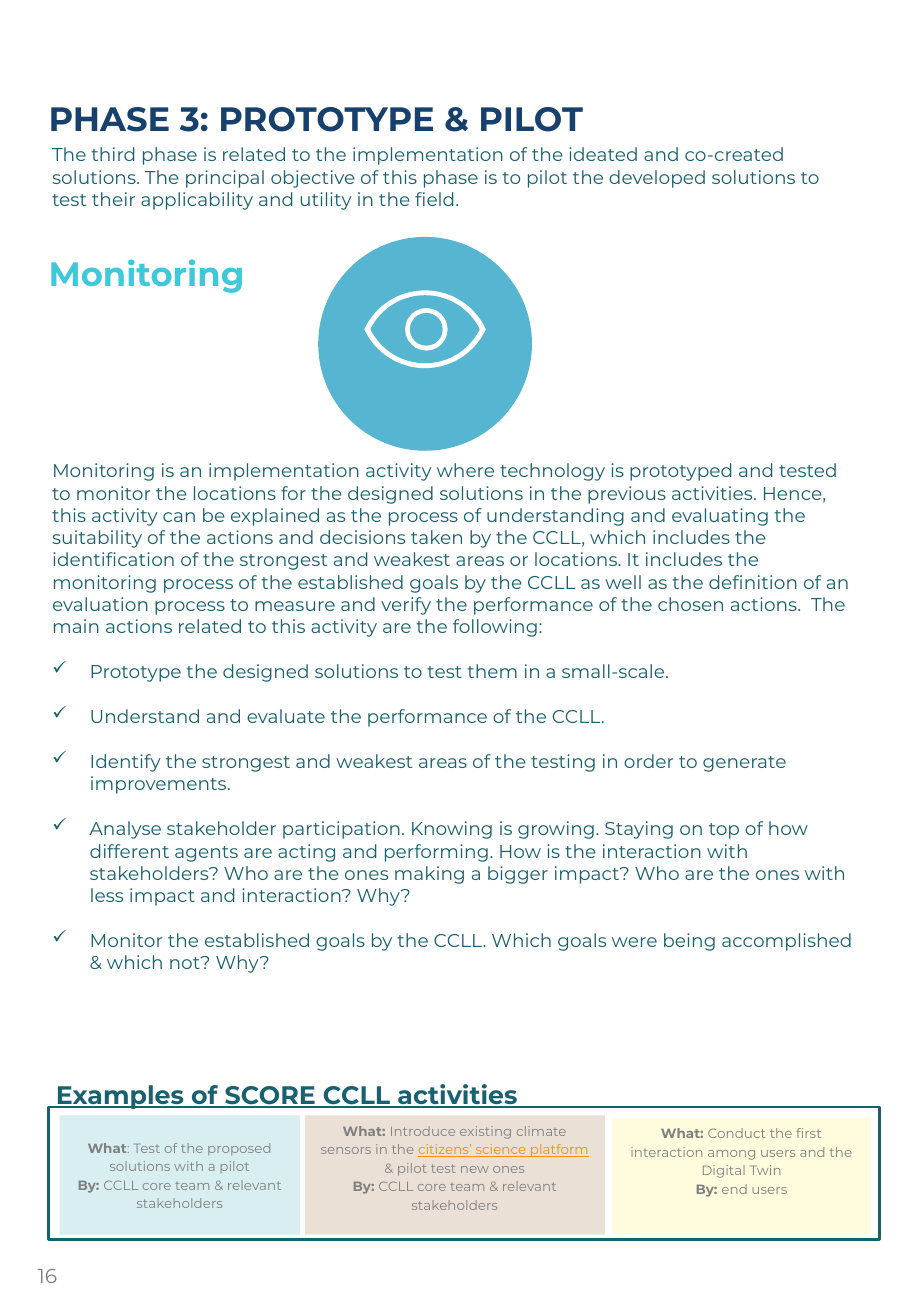
import math
from dataclasses import dataclass

from lxml import etree
from pptx import Presentation
from pptx.dml.color import RGBColor
from pptx.enum import shapes, text
from pptx.oxml.ns import qn
from pptx.util import Inches, Pt


@dataclass(frozen=True)
class Theme:
    font: str = "Montserrat"
    navy: str = "17406D"
    teal: str = "19616F"
    aqua: str = "3EC8D9"
    icon: str = "56B5D1"
    grey: str = "808080"
    orange: str = "F49100"
    white: str = "FFFFFF"
    title: int = 20
    subtitle: int = 15
    number: int = 12
    body: int = 11
    card: int = 8


THEME = Theme()
NO_INSETS = (0, 0, 0, 0)
BODY_INSETS = (0.1, 0.05, 0.1, 0.05)
LABEL_INSETS = (0.06, 0.02, 0.06, 0.03)
CARD_INSETS = (0.1, 0.04, 0.1, 0.05)
BULLET_INDENT = 0.31
BULLET_GAP = 13.4

INTRO = (
    "The third phase is related to the implementation of the ideated and co-created solutions. "
    "The principal objective of this phase is to pilot the developed solutions to test their "
    "applicability and utility in the field."
)
MONITORING = (
    "Monitoring is an implementation activity where technology is prototyped and tested to monitor "
    "the locations for the designed solutions in the previous activities. Hence, this activity can "
    "be explained as the process of understanding and evaluating the suitability of the actions and "
    "decisions taken by the CCLL, which includes the identification of the strongest and weakest "
    "areas or locations. It includes the monitoring process of the established goals by the CCLL as "
    "well as the definition of an evaluation process to measure and verify the performance of the "
    "chosen actions.  The main actions related to this activity are the following:"
)
ACTIONS = [
    "Prototype the designed solutions to test them in a small-scale.",
    "Understand and evaluate the performance of the CCLL.",
    "Identify the strongest and weakest areas of the testing in order to generate improvements.",
    "Analyse stakeholder participation. Knowing is growing. Staying on top of how different agents "
    "are acting and performing. How is the interaction with stakeholders? Who are the ones making a "
    "bigger impact? Who are the ones with less impact and interaction? Why?",
    "Monitor the established goals by the CCLL. Which goals were being accomplished & which not? Why?",
]
# Headings and labels: text, box, size, colour, bold, line spacing, insets
LABELS = [
    ("PHASE 3: PROTOTYPE & PILOT", (0.4, 0.77, 7.1, 0.55),
     THEME.title, THEME.navy, True, 1.1, NO_INSETS),
    ("Monitoring", (0.4, 2.05, 2.1, 0.4), THEME.title, THEME.aqua, True, 1.1, NO_INSETS),
    ("Examples of SCORE CCLL activities", (0.4, 8.82, 5.02, 0.38),
     THEME.subtitle, THEME.teal, True, 1.15, LABEL_INSETS),
    ("16", (0.25, 10.35, 0.6, 0.34), THEME.number, THEME.grey, False, 1.15, LABEL_INSETS),
]
# Example cards: box, fill, opacity in percent, anchor, paragraphs of (text, style) runs
CARDS = [
    ((0.49, 9.18, 1.98, 0.98), "D8EEF0", 100, text.MSO_ANCHOR.MIDDLE, [
        [("What", "bold"), (": Test of the proposed", "")],
        [("solutions with a pilot", "")],
        [("By: ", "bold"), ("CCLL core team & relevant stakeholders", "")],
    ]),
    ((2.51, 9.18, 2.47, 0.98), "996633", 20, text.MSO_ANCHOR.TOP, [
        [("What: ", "bold"), ("Introduce existing climate sensors in the ", ""),
         ("citizens’ science platform ", "link"), ("& pilot test new ones", "")],
        [("By: ", "bold"), ("CCLL core team & relevant stakeholders", "")],
    ]),
    ((5.04, 9.2, 2.13, 0.96), "FFFCDD", 100, text.MSO_ANCHOR.TOP, [
        [("What: ", "bold"),
         ("Conduct the first interaction among users and the Digital Twin", "")],
        [("By: ", "bold"), ("end users", "")],
    ]),
]
FRAME = (0.4, 9.11, 6.84, 1.09)
EYE_CENTER = (3.5, 2.71)


def rgb(value):
    return RGBColor.from_string(value)


def inches(values):
    return [Inches(value) for value in values]


def paint(shape, fill=None, line=None):
    shape.shadow.inherit = False
    if fill:
        shape.fill.solid()
        shape.fill.fore_color.rgb = rgb(fill)
    else:
        shape.fill.background()
    if line:
        shape.line.color.rgb = rgb(line)
        shape.line.width = Pt(1.5)
    else:
        shape.line.fill.background()
    return shape


def add_rectangle(slide, box, fill=None, line=None):
    shape = slide.shapes.add_shape(shapes.MSO_SHAPE.RECTANGLE, *inches(box))
    return paint(shape, fill, line)


def prepare_frame(shape, insets, anchor=text.MSO_ANCHOR.TOP):
    frame = shape.text_frame
    frame.word_wrap = True
    frame.vertical_anchor = anchor
    (frame.margin_left, frame.margin_top,
     frame.margin_right, frame.margin_bottom) = inches(insets)
    return frame


def style(paragraph, size, color, bold=None, spacing=None, align=text.PP_ALIGN.LEFT):
    paragraph.alignment = align
    if spacing:
        paragraph.line_spacing = spacing
    font = paragraph.font
    font.name, font.size, font.bold = THEME.font, Pt(size), bold
    font.color.rgb = rgb(color)


def add_check_bullet(paragraph):
    paragraph.space_before = Pt(BULLET_GAP)
    properties = paragraph._p.get_or_add_pPr()
    properties.set("marL", str(Inches(BULLET_INDENT)))
    properties.set("indent", str(-Inches(BULLET_INDENT)))
    etree.SubElement(properties, qn("a:buChar")).set("char", "✓")


def add_disc(group, center, diameter, fill):
    left, top = (value - diameter / 2 for value in center)
    disc = group.shapes.add_shape(
        shapes.MSO_SHAPE.OVAL, *inches((left, top, diameter, diameter)))
    paint(disc, fill)


def add_lens(group, half_width, half_height, fill):
    """Draw the almond outline between two equal circular arcs."""
    radius = (half_width ** 2 + half_height ** 2) / (2 * half_height)
    sweep = math.asin(half_width / radius)
    steps = 32
    angles = [sweep * (2 * step / steps - 1) for step in range(steps + 1)]
    upper = [(radius * math.sin(angle), radius - half_height - radius * math.cos(angle))
             for angle in angles]
    outline = upper + [(-x, -y) for x, y in upper[1:-1]]
    points = [inches((EYE_CENTER[0] + x, EYE_CENTER[1] + y)) for x, y in outline]
    builder = group.shapes.build_freeform(*points[0])
    builder.add_line_segments(points[1:], close=True)
    paint(builder.convert_to_shape(), fill)


def add_eye_icon(slide):
    group = slide.shapes.add_group_shape()
    add_disc(group, (3.5, 2.83), 1.76, THEME.icon)
    add_lens(group, 0.5, 0.32, THEME.white)
    add_lens(group, 0.45, 0.28, THEME.icon)
    add_disc(group, (3.51, 2.71), 0.35, THEME.white)
    add_disc(group, (3.51, 2.71), 0.27, THEME.icon)


def add_card(slide, box, fill, opacity, anchor, paragraphs):
    card = add_rectangle(slide, box, fill)
    if opacity < 100:
        color = card._element.spPr.find(qn("a:solidFill"))[0]
        etree.SubElement(color, qn("a:alpha")).set("val", str(opacity * 1000))
    frame = prepare_frame(card, CARD_INSETS, anchor)
    for index, runs in enumerate(paragraphs):
        paragraph = frame.add_paragraph() if index else frame.paragraphs[0]
        style(paragraph, THEME.card, THEME.grey, spacing=1.15, align=text.PP_ALIGN.CENTER)
        for words, kind in runs:
            run = paragraph.add_run()
            run.text = words
            run.font.bold = kind == "bold"
            run.font.underline = kind == "link"
            run.font.color.rgb = rgb(THEME.orange if kind == "link" else THEME.grey)


def main():
    presentation = Presentation()
    presentation.slide_width, presentation.slide_height = inches((7.5, 10.83))
    slide = presentation.slides.add_slide(presentation.slide_layouts[6])

    intro = add_rectangle(slide, (0.33, 1.13, 6.79, 0.66), THEME.white)
    paragraph = prepare_frame(intro, BODY_INSETS).paragraphs[0]
    paragraph.text = INTRO
    style(paragraph, THEME.body, THEME.teal)

    add_eye_icon(slide)

    body = slide.shapes.add_textbox(*inches((0.33, 3.73, 6.85, 4.54)))
    frame = prepare_frame(body, BODY_INSETS)
    for index, words in enumerate([MONITORING, *ACTIONS]):
        paragraph = frame.add_paragraph() if index else frame.paragraphs[0]
        paragraph.text = words
        if index:
            add_check_bullet(paragraph)
        style(paragraph, THEME.body, THEME.teal)

    for words, box, size, color, bold, spacing, insets in LABELS:
        label = slide.shapes.add_textbox(*inches(box))
        paragraph = prepare_frame(label, insets).paragraphs[0]
        paragraph.text = words
        style(paragraph, size, color, bold, spacing)

    add_rectangle(slide, FRAME, line=THEME.teal)
    for card in CARDS:
        add_card(slide, *card)
    presentation.save("out.pptx")


if __name__ == "__main__":
    main()
